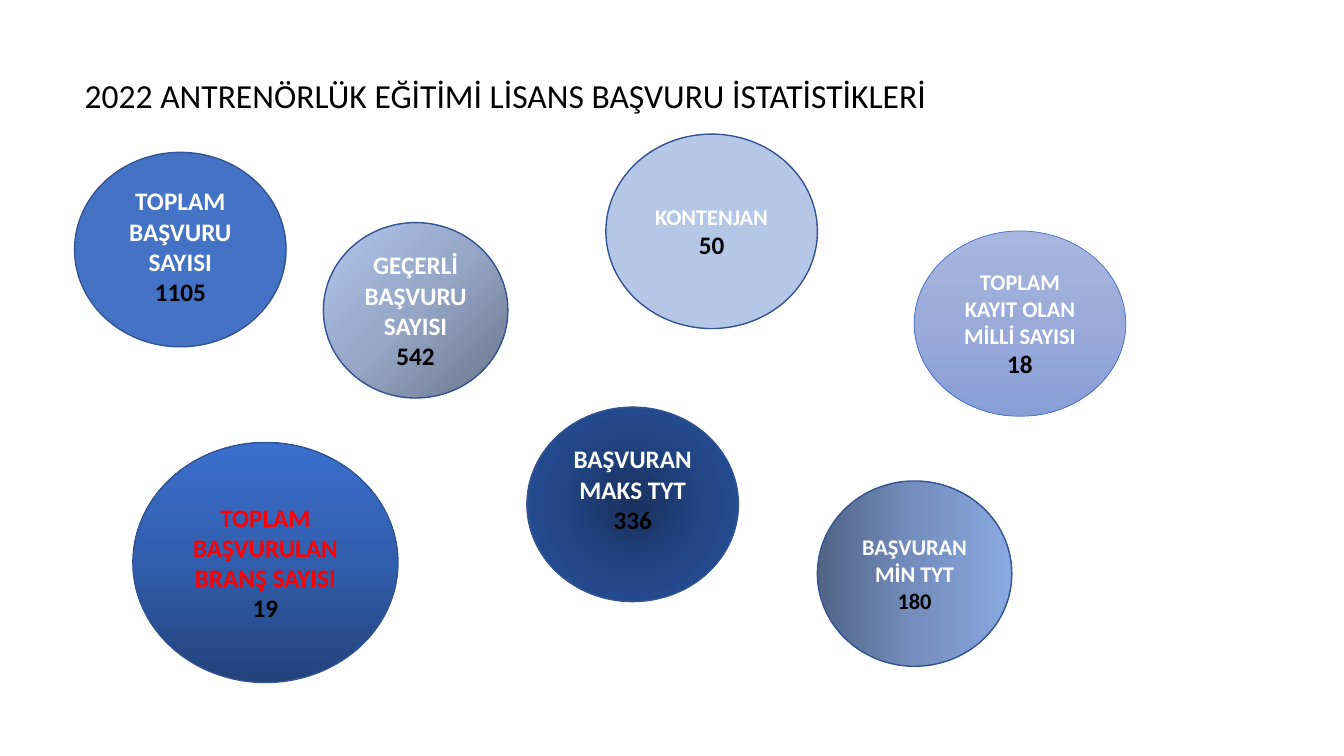
import lxml.etree
import pptx
import pptx.dml.color
import pptx.enum.shapes
import pptx.enum.text
import pptx.oxml.ns
import pptx.util

COLORS = {
    "black": "000000",
    "white": "FFFFFF",
    "red": "FF0000",
    "blue": "4472C4",
    "pale": "B4C7E7",
    "outline": "325491",
}
ANCHOR = pptx.enum.text.MSO_ANCHOR
ALIGN = pptx.enum.text.PP_ALIGN


def rgb(name):
    return pptx.dml.color.RGBColor.from_string(COLORS[name])


class StatSlide:
    """Holds the text style and the current slide."""

    font = "Calibri"

    def __init__(self, deck):
        self.slide = deck.slides.add_slide(deck.slide_layouts[5])

    def add_run(self, para, text, size, color, bold=False):
        run = para.add_run()
        run.text = text
        run.font.name = self.font
        run.font.size = pptx.util.Pt(size)
        run.font.bold = bold
        run.font.color.rgb = rgb(color)

    def title(self, text, left, top, width, height):
        box = self.slide.shapes.title
        box.left, box.top = pptx.util.Cm(left), pptx.util.Cm(top)
        box.width, box.height = pptx.util.Cm(width), pptx.util.Cm(height)
        box.text_frame.vertical_anchor = ANCHOR.MIDDLE
        para = box.text_frame.paragraphs[0]
        para.alignment = ALIGN.LEFT
        para.line_spacing = 0.9
        self.add_run(para, text, 24, "black")

    def gradient(self, shape, stops, angle=None, focus=None):
        """Three even stops, along an angle or around a focus (l, t, r, b)."""
        shape.fill.gradient()
        fill = shape._element.spPr.find(pptx.oxml.ns.qn("a:gradFill"))
        for child in list(fill):
            fill.remove(child)

        def add(parent, tag, **attributes):
            return lxml.etree.SubElement(parent, pptx.oxml.ns.qn(tag), attributes)

        stop_list = add(fill, "a:gsLst")
        for index, color in enumerate(stops):
            stop = add(stop_list, "a:gs", pos=str(index * 50000))
            add(stop, "a:srgbClr", val=color)
        if focus:
            circle = add(fill, "a:path", path="circle")
            sides = {side: str(share * 1000) for side, share in zip("ltrb", focus)}
            add(circle, "a:fillToRect", **sides)
        else:
            add(fill, "a:lin", ang=str(angle * 60000), scaled="0")

    def bubble(self, place, label, value, fill, sizes=(18, 18), label_color="white",
               line=("outline", 1), anchor=ANCHOR.MIDDLE, bottom=0.13):
        shape = self.slide.shapes.add_shape(
            pptx.enum.shapes.MSO_SHAPE.OVAL, *(pptx.util.Cm(length) for length in place))
        shape.shadow.inherit = False
        if isinstance(fill, dict):
            self.gradient(shape, **fill)
        else:
            shape.fill.solid()
            shape.fill.fore_color.rgb = rgb(fill)
        shape.line.color.rgb = rgb(line[0])
        shape.line.width = pptx.util.Pt(line[1])

        frame = shape.text_frame
        frame.word_wrap = True
        frame.vertical_anchor = anchor
        frame.margin_bottom = pptx.util.Cm(bottom)
        for para, text, size, color in zip(
                (frame.paragraphs[0], frame.add_paragraph()),
                (label, value), sizes, (label_color, "black")):
            para.alignment = ALIGN.CENTER
            self.add_run(para, text, size, color, bold=True)


def main():
    deck = pptx.Presentation()
    deck.slide_width, deck.slide_height = pptx.util.Cm(33.87), pptx.util.Cm(19.05)
    page = StatSlide(deck)

    # Heading
    page.title("2022 ANTRENÖRLÜK EĞİTİMİ LİSANS BAŞVURU İSTATİSTİKLERİ",
               1.88, 1.7, 23.88, 1.52)

    # Applications
    page.bubble((1.88, 3.84, 5.33, 4.9), "TOPLAM BAŞVURU SAYISI", "1105", "blue",
                anchor=ANCHOR.TOP)
    page.bubble((8.15, 5.61, 4.65, 4.42), "GEÇERLİ BAŞVURU SAYISI", "542",
                {"stops": ("68758B", "95A6C6", "B0C6EB"), "focus": (100, 100, 0, 0)})
    page.bubble((3.35, 11.15, 6.68, 6.05), "TOPLAM BAŞVURULAN BRANŞ SAYISI", "19",
                {"stops": ("23427A", "315EAD", "3A6FCE"), "angle": 270},
                label_color="red")

    # Places and enrolment
    page.bubble((15.27, 3.38, 5.33, 4.9), "KONTENJAN", "50", "pale", sizes=(16, 18))
    page.bubble((23.04, 5.82, 5.33, 4.67), "TOPLAM KAYIT OLAN MİLLİ SAYISI", "18",
                {"stops": ("A8B7DF", "9AABD9", "889ED7"), "angle": 90},
                sizes=(16, 18), line=("blue", 0.5))

    # Exam scores
    page.bubble((13.28, 10.26, 5.33, 4.9), "BAŞVURAN MAKS TYT", "336",
                {"stops": ("18315E", "224585", "28529E"), "focus": (50, 50, 50, 50)},
                bottom=0.9)
    page.bubble((20.6, 12.12, 4.9, 4.67), "BAŞVURAN MİN TYT", "180",
                {"stops": ("516486", "748EBE", "89A9E1"), "angle": 0}, sizes=(16, 16))

    deck.save("out.pptx")


if __name__ == "__main__":
    main()
